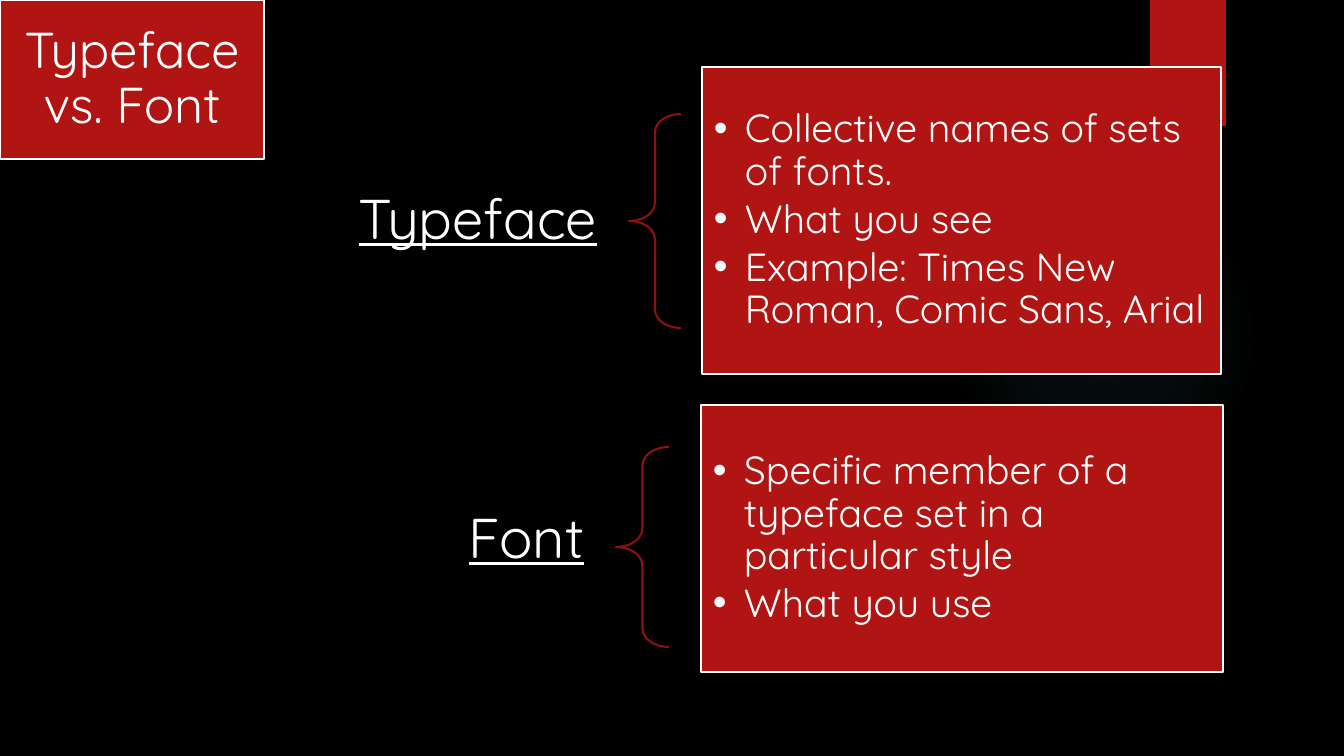
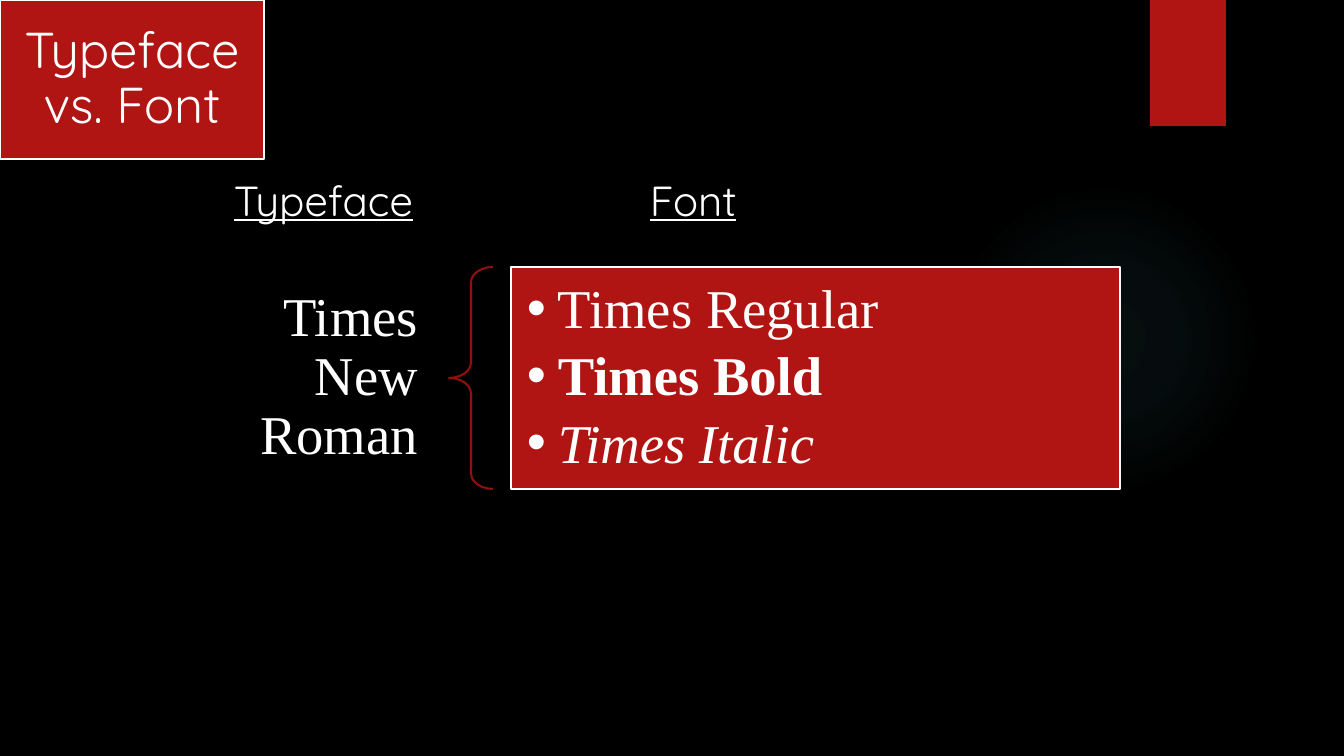
from pptx import Presentation
from pptx.dml.color import RGBColor
from pptx.enum.shapes import MSO_SHAPE
from pptx.enum.text import MSO_ANCHOR, MSO_AUTO_SIZE, PP_ALIGN
from pptx.oxml import parse_xml
from pptx.oxml.ns import nsdecls, qn
from pptx.util import Pt

RECTANGLE, OVAL, LEFT_BRACE = MSO_SHAPE.RECTANGLE, MSO_SHAPE.OVAL, MSO_SHAPE.LEFT_BRACE
TOP, MIDDLE = MSO_ANCHOR.TOP, MSO_ANCHOR.MIDDLE
LEFT, CENTER, RIGHT = PP_ALIGN.LEFT, PP_ALIGN.CENTER, PP_ALIGN.RIGHT
NO_AUTOFIT = MSO_AUTO_SIZE.NONE

PX = 12192000 / 1344
BLACK, WHITE, RED, DARK_RED, TEAL = "000000", "FFFFFF", "B01513", "8D110F", "50B9C1"
QUICKSAND, TIMES = "Quicksand", "Times New Roman"
INDENT = 31


def px(*lengths):
    return [round(length * PX) for length in lengths]


def write(shape, lines, font, align=LEFT, anchor=MIDDLE, inset=(10, 5), spacing=0.9,
          after=0, bullet=False):
    frame = shape.text_frame
    across, down = px(*inset)
    layout = {"word_wrap": True, "auto_size": NO_AUTOFIT, "vertical_anchor": anchor,
              "margin_left": across, "margin_right": across,
              "margin_top": down, "margin_bottom": down}
    for key, value in layout.items():
        setattr(frame, key, value)
    for number, (text, emphasis) in enumerate(lines):
        paragraph = frame.add_paragraph() if number else frame.paragraphs[0]
        if bullet:
            properties = paragraph._p.get_or_add_pPr()
            hang, = px(INDENT)
            properties.set("marL", str(hang))
            properties.set("indent", str(-hang))
            properties.append(parse_xml(f'<a:buChar {nsdecls("a")} char="•"/>'))
        rhythm = {"alignment": align, "line_spacing": spacing,
                  "space_before": Pt(0), "space_after": Pt(after)}
        for key, value in rhythm.items():
            setattr(paragraph, key, value)
        run = paragraph.add_run()
        run.text = text
        for key, value in {**font, **emphasis}.items():
            setattr(run.font, key, value)
        run.font.color.rgb = RGBColor.from_string(WHITE)


deck = Presentation()
deck.slide_width, deck.slide_height = px(1344, 756)
master = deck.slide_master
master.background.fill.solid()
master.background.fill.fore_color.rgb = RGBColor.from_string(BLACK)
content_layout, two_content_layout = deck.slide_layouts[1], deck.slide_layouts[3]

title_font = {"name": QUICKSAND, "size": Pt(36)}
term_font = {"name": QUICKSAND, "size": Pt(40), "underline": True}
heading_font = {"name": QUICKSAND, "size": Pt(30), "underline": True}
definition_font = {"name": QUICKSAND, "size": Pt(28)}
sample_font = {"name": TIMES, "size": Pt(39)}

definitions = [
    {"term": "Typeface", "term_box": (222, 112, 406, 218), "brace_box": (629, 114, 52, 214),
     "panel_box": (702, 67, 519, 307), "term_font": term_font, "panel_font": definition_font,
     "inset": 12, "after": 4,
     "points": [("Collective names of sets of fonts.", {}), ("What you see", {}),
                ("Example: Times New Roman, Comic Sans, Arial", {})]},
    {"term": "Font", "term_box": (352, 470, 263, 140), "brace_box": (616, 447, 53, 200),
     "panel_box": (701, 405, 522, 267), "term_font": term_font, "panel_font": definition_font,
     "inset": 12, "after": 4,
     "points": [("Specific member of a typeface set in a particular style", {}),
                ("What you use", {})]},
]
samples = [
    {"term": "Times New Roman", "term_box": (225, 282, 224, 192), "brace_box": (449, 267, 44, 222),
     "panel_box": (511, 267, 609, 222), "term_font": sample_font, "panel_font": sample_font,
     "inset": 16, "after": 6,
     "points": [("Times Regular", {}), ("Times Bold", {"bold": True}),
                ("Times Italic", {"italic": True})]},
]
column_headings = [("Typeface", (224, 169, 371, 61)), ("Font", (640, 169, 132, 61))]

for slide_layout, groups, headings in [(two_content_layout, definitions, []),
                                       (content_layout, samples, column_headings)]:
    slide = deck.slides.add_slide(slide_layout)
    title, *panels = slide.placeholders
    boxes = [(0, 0, 264, 159)] + [group["panel_box"] for group in groups]
    for block, box in zip([title, *panels], boxes):
        block.left, block.top, block.width, block.height = px(*box)
        block.fill.solid()
        block.fill.fore_color.rgb = RGBColor.from_string(RED)
        block.line.color.rgb = RGBColor.from_string(WHITE)
        block.line.width = Pt(1.5)
    write(title, [("Typeface vs. Font", {})], title_font, CENTER, inset=(15, 15))

    for panel, group in zip(panels, groups):
        write(panel, group["points"], group["panel_font"], inset=(group["inset"], group["inset"]),
              after=group["after"], bullet=True)
        term = slide.shapes.add_textbox(*px(*group["term_box"]))
        write(term, [(group["term"], {})], group["term_font"], RIGHT, inset=(31, 11))
        brace = slide.shapes.add_shape(LEFT_BRACE, *px(*group["brace_box"]))
        brace.adjustments[0] = 0.35
        brace.shadow.inherit = False
        brace.fill.background()
        brace.line.color.rgb = RGBColor.from_string(DARK_RED)
        brace.line.width = Pt(1.5)

    for text, box in headings:
        heading = slide.shapes.add_textbox(*px(*box))
        write(heading, [(text, {})], heading_font, anchor=TOP, spacing=1.0)

glow = slide.shapes.add_shape(OVAL, *px(949, 184, 310, 310))
glow.fill.gradient()
stops = "".join(
    f'<a:gs pos="{position * 1000}"><a:srgbClr val="{TEAL}">'
    f'<a:alpha val="{opacity * 1000}"/></a:srgbClr></a:gs>'
    for position, opacity in [(0, 7), (36, 6), (69, 0)])
glow_fill = parse_xml(
    f'<a:gradFill {nsdecls("a")}><a:gsLst>{stops}</a:gsLst><a:path path="circle">'
    '<a:fillToRect l="50000" t="50000" r="50000" b="50000"/></a:path></a:gradFill>')
glow_properties = glow.element.spPr
glow_properties.replace(glow_properties.find(qn("a:gradFill")), glow_fill)

ribbon = slide.shapes.add_shape(RECTANGLE, *px(1150, 0, 76, 126))
ribbon.fill.solid()
ribbon.fill.fore_color.rgb = RGBColor.from_string(RED)

for decoration in (glow, ribbon):
    decoration.shadow.inherit = False
    decoration.line.fill.background()
for decoration in (glow, ribbon):
    master.shapes.element.append(decoration.element)

deck.save("out.pptx")
